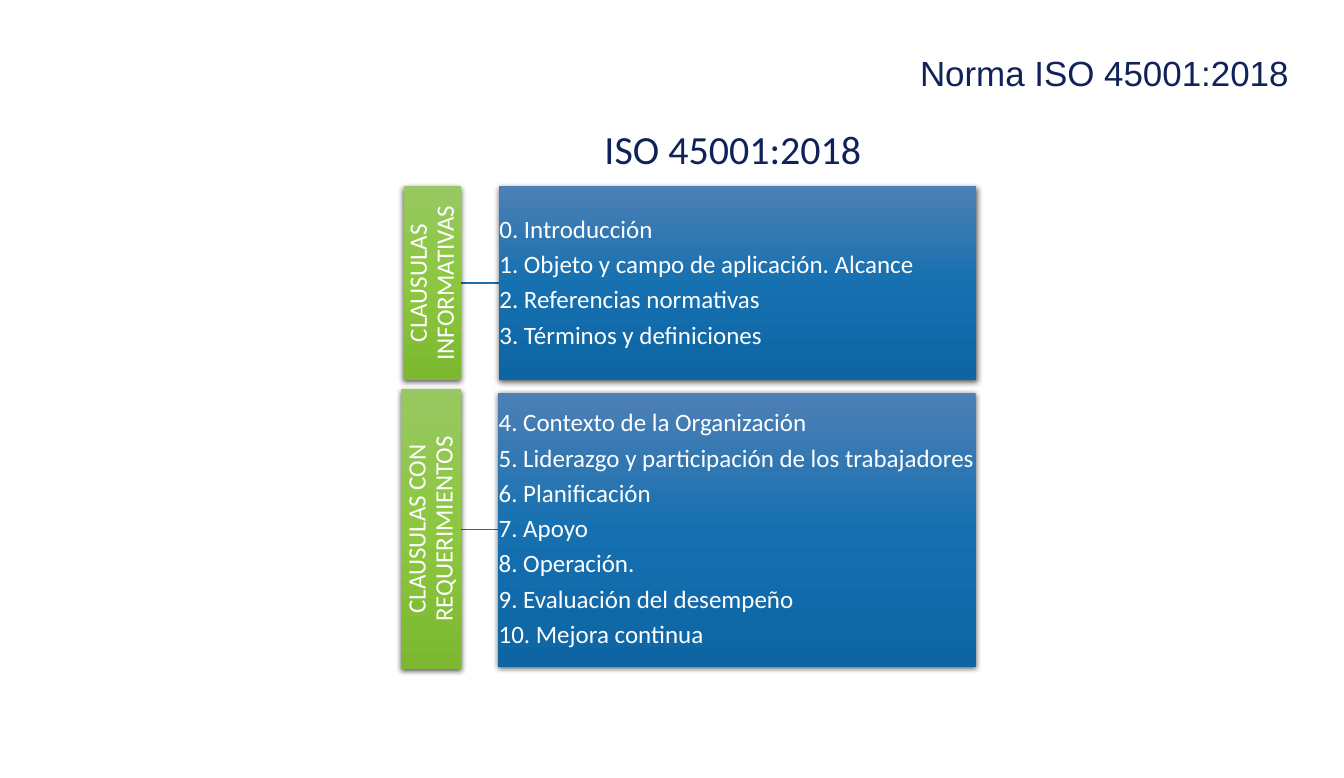
import pptx
import pptx.dml.color
import pptx.enum.shapes
import pptx.enum.text
import pptx.oxml
import pptx.oxml.ns
import pptx.util
from dataclasses import dataclass

Cm, Pt = pptx.util.Cm, pptx.util.Pt
Align = pptx.enum.text.PP_ALIGN
Anchor = pptx.enum.text.MSO_ANCHOR
RGB = pptx.dml.color.RGBColor.from_string
NS = pptx.oxml.ns.nsdecls("a")


@dataclass(frozen=True)
class Theme:
    navy: str = "0F235A"
    white: str = "FFFFFF"
    link: str = "1D6FA9"
    greens: tuple = ("98C862", "8CC73F", "7DB831")
    blues: tuple = ("4E80B5", "1670B0", "0D65A3")
    title_size: int = 28
    heading_size: int = 32
    body_size: int = 20


theme = Theme()


def write(frame, text, size, color, font="Calibri", align=Align.LEFT,
          anchor=Anchor.MIDDLE, inset=0, spacing=None, after=0, wrap=True):
    """Fill a text frame, one paragraph per line of text."""
    frame.word_wrap = wrap
    frame.vertical_anchor = anchor
    frame.margin_left = frame.margin_right = Cm(inset)
    frame.margin_top = frame.margin_bottom = Cm(inset)
    for number, line in enumerate(text.split("\n")):
        paragraph = frame.add_paragraph() if number else frame.paragraphs[0]
        paragraph.alignment = align
        paragraph.line_spacing = spacing
        paragraph.space_after = Pt(after)
        run = paragraph.add_run()
        run.text = line
        run.font.name = font
        run.font.size = Pt(size)
        run.font.color.rgb = RGB(color)


def add_panel(box, colors):
    """Draw a borderless rectangle with a vertical gradient and a soft shadow."""
    panel = slide.shapes.add_shape(
        pptx.enum.shapes.MSO_SHAPE.RECTANGLE, *map(Cm, box))
    panel.line.fill.background()
    stops = "".join(
        f'<a:gs pos="{step * 50000}"><a:srgbClr val="{color}"/></a:gs>'
        for step, color in enumerate(colors))
    gradient = pptx.oxml.parse_xml(
        f'<a:gradFill {NS} rotWithShape="1"><a:gsLst>{stops}</a:gsLst>'
        '<a:lin ang="5400000" scaled="0"/></a:gradFill>')
    shadow = pptx.oxml.parse_xml(
        f'<a:effectLst {NS}><a:outerShdw blurRad="57150" dist="19050" '
        'dir="5400000" algn="ctr" rotWithShape="0"><a:srgbClr val="000000">'
        '<a:alpha val="63000"/></a:srgbClr></a:outerShdw></a:effectLst>')
    properties = panel.element.spPr
    properties.find(pptx.oxml.ns.qn("a:prstGeom")).addnext(gradient)
    properties.append(shadow)
    return panel


presentation = pptx.Presentation()
presentation.slide_width = Cm(38)
presentation.slide_height = Cm(22)
slide = presentation.slides.add_slide(presentation.slide_layouts[6])

# Title and heading
title = slide.shapes.add_textbox(Cm(5.21), Cm(1.5), Cm(31.22), Cm(1.14))
write(title.text_frame, "Norma ISO 45001:2018", size=theme.title_size,
      color=theme.navy, font="Arial", align=Align.RIGHT, spacing=Pt(32))

heading = slide.shapes.add_textbox(Cm(16.66), Cm(3.53), Cm(8.13), Cm(1.37))
write(heading.text_frame, "ISO 45001:2018", size=theme.heading_size,
      color=theme.navy, align=Align.CENTER, anchor=Anchor.TOP)

# Clause groups: label, label box, clauses, clause box (left, top, width, height)
groups = [
    ("CLAUSULAS INFORMATIVAS", (11.41, 5.26, 1.63, 5.49),
     "0. Introducción\n"
     "1. Objeto y campo de aplicación. Alcance\n"
     "2. Referencias normativas\n"
     "3. Términos y definiciones", (14.1, 5.26, 13.51, 5.49)),
    ("CLAUSULAS CON REQUERIMIENTOS", (11.35, 11, 1.68, 7.92),
     "4. Contexto de la Organización\n"
     "5. Liderazgo y participación de los trabajadores\n"
     "6. Planificación\n"
     "7. Apoyo\n"
     "8. Operación.\n"
     "9. Evaluación del desempeño\n"
     "10. Mejora continua", (14.08, 11.1, 13.51, 7.75)),
]

for label, label_box, clauses, clause_box in groups:
    # Link between label and clauses
    middle = Cm(clause_box[1] + clause_box[3] / 2)
    link = slide.shapes.add_connector(
        pptx.enum.shapes.MSO_CONNECTOR.STRAIGHT,
        Cm(label_box[0] + label_box[2]), middle, Cm(clause_box[0]), middle)
    link.line.color.rgb = RGB(theme.link)
    link.line.width = Pt(1)
    link.element.spPr.append(pptx.oxml.parse_xml(f"<a:effectLst {NS}/>"))

    # Label reading upwards
    label_panel = add_panel(label_box, theme.greens)
    write(label_panel.text_frame, label, size=theme.body_size,
          color=theme.white, align=Align.CENTER, inset=0.02, spacing=0.9)
    label_panel.text_frame._txBody.bodyPr.set("vert", "vert270")

    # Clause list
    clause_panel = add_panel(clause_box, theme.blues)
    write(clause_panel.text_frame, clauses, size=theme.body_size,
          color=theme.white, inset=0.02, spacing=0.9, after=6.7)

presentation.save("out.pptx")
